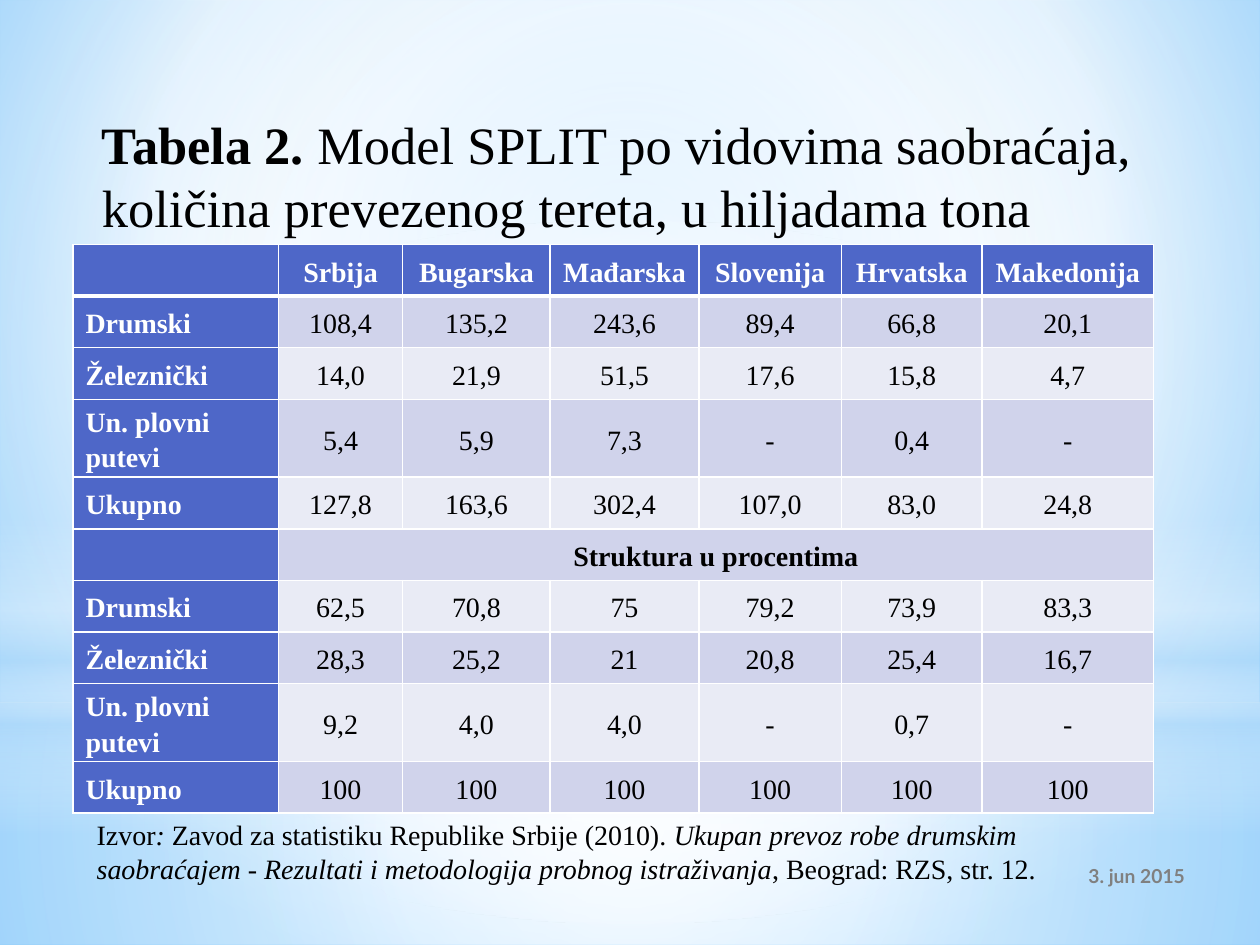
from lxml.etree import SubElement
from pptx import Presentation
from pptx.dml.color import RGBColor
from pptx.enum.shapes import MSO_SHAPE
from pptx.enum.text import MSO_ANCHOR, PP_ALIGN
from pptx.oxml.ns import qn
from pptx.util import Cm, Pt

WHITE = RGBColor(0xFF, 0xFF, 0xFF)
BLACK = RGBColor(0, 0, 0)
GREY = RGBColor(0x80, 0x80, 0x80)
HEADER_BLUE = RGBColor(0x4E, 0x67, 0xC8)
BAND_DARK = RGBColor(0xD0, 0xD3, 0xEB)
BAND_LIGHT = RGBColor(0xE9, 0xEB, 0xF5)
SKY = RGBColor(0x9E, 0xD5, 0xFF)
DEEP_SKY = RGBColor(0x5B, 0xB9, 0xFF)
MIST = RGBColor(0xB4, 0xDC, 0xFA)

SERIF, SANS = "Times New Roman", "Lato"
TITLE_ONLY = 5
CENTRE = (50, 50, 50, 50)

COLUMN_WIDTHS = (4.14, 2.51, 2.97, 3, 2.87, 2.84, 3.45)
ROW_HEIGHT, TALL_ROW_HEIGHT = 1.04, 1.57
WATERWAYS = "Un. plovni putevi"
SECTION = "Struktura u procentima"
FREIGHT = (
    ("", "Srbija", "Bugarska", "Mađarska", "Slovenija", "Hrvatska", "Makedonija"),
    ("Drumski", "108,4", "135,2", "243,6", "89,4", "66,8", "20,1"),
    ("Železnički", "14,0", "21,9", "51,5", "17,6", "15,8", "4,7"),
    (WATERWAYS, "5,4", "5,9", "7,3", "-", "0,4", "-"),
    ("Ukupno", "127,8", "163,6", "302,4", "107,0", "83,0", "24,8"),
    ("", SECTION, "", "", "", "", ""),
    ("Drumski", "62,5", "70,8", "75", "79,2", "73,9", "83,3"),
    ("Železnički", "28,3", "25,2", "21", "20,8", "25,4", "16,7"),
    (WATERWAYS, "9,2", "4,0", "4,0", "-", "0,7", "-"),
    ("Ukupno", "100", "100", "100", "100", "100", "100"),
)


def write_gradient(owner, stops, focus=None):
    """Set (position, colour, opacity) stops; focus is the circle's l, t, r, b in percent."""
    gradient = owner.find(".//" + qn("a:gradFill"))
    for child in list(gradient):
        gradient.remove(child)
    stop_list = SubElement(gradient, qn("a:gsLst"))
    for position, colour, opacity in stops:
        stop = SubElement(stop_list, qn("a:gs"), pos=str(position * 1000))
        rgb = SubElement(stop, qn("a:srgbClr"), val=str(colour))
        if opacity < 100:
            SubElement(rgb, qn("a:alpha"), val=str(opacity * 1000))
    if focus:
        circle = SubElement(gradient, qn("a:path"), path="circle")
        sides = {side: str(share * 1000) for side, share in zip("ltrb", focus)}
        SubElement(circle, qn("a:fillToRect"), **sides)
    else:
        SubElement(gradient, qn("a:lin"), ang="5400000", scaled="0")


def write_borders(cell, bottom_width):
    properties = cell._tc.get_or_add_tcPr()
    for index, (side, width) in enumerate(zip("LRTB", (1, 1, 1, bottom_width))):
        line = SubElement(properties, qn("a:ln" + side), w=str(Pt(width)))
        fill = SubElement(line, qn("a:solidFill"))
        SubElement(fill, qn("a:srgbClr"), val=str(WHITE))
        properties.insert(index, line)


class SlideBuilder:
    def __init__(self, slide):
        self.slide = slide

    def background(self, stops, focus):
        self.slide.background.fill.gradient()
        write_gradient(self.slide.element, stops, focus)

    def glow(self, kind, top, height, stops, focus=None):
        """Full-width translucent shape."""
        shape = self.slide.shapes.add_shape(kind, 0, Cm(top), Cm(25.4), Cm(height))
        shape.shadow.inherit = False
        shape.line.fill.background()
        shape.fill.gradient()
        write_gradient(shape.element, stops, focus)

    def style(self, paragraph, size, colour, bold=None, font=SERIF, align=PP_ALIGN.LEFT):
        paragraph.alignment = align
        paragraph.font.name = font
        paragraph.font.size = Pt(size)
        paragraph.font.color.rgb = colour
        paragraph.font.bold = bold

    def runs(self, paragraph, parts):
        """Add (text, bold, italic) runs."""
        for text, bold, italic in parts:
            run = paragraph.add_run()
            run.text = text
            run.font.bold = bold
            run.font.italic = italic

    def title(self, left, top, width, height, parts):
        title = self.slide.shapes.title
        title.left, title.top, title.width, title.height = map(Cm, (left, top, width, height))
        title.text_frame.vertical_anchor = MSO_ANCHOR.BOTTOM
        title.text_frame.word_wrap = True
        paragraph = title.text_frame.paragraphs[0]
        self.style(paragraph, 30, BLACK)
        self.runs(paragraph, parts)
        self.slide.shapes._spTree.append(title.element)  # in front of the glows

    def text(self, left, top, width, height, parts, anchor=MSO_ANCHOR.TOP, **style):
        frame = self.slide.shapes.add_textbox(*map(Cm, (left, top, width, height))).text_frame
        frame.word_wrap = True
        frame.vertical_anchor = anchor
        self.style(frame.paragraphs[0], **style)
        self.runs(frame.paragraphs[0], parts)

    def cell(self, cell, text, row, column):
        heading = row == 0 or column == 0
        band = BAND_DARK if row % 2 else BAND_LIGHT
        cell.fill.solid()
        cell.fill.fore_color.rgb = HEADER_BLUE if heading else band
        cell.vertical_anchor = MSO_ANCHOR.MIDDLE
        cell.margin_top = cell.margin_bottom = 0
        cell.text = text
        paragraph = cell.text_frame.paragraphs[0]
        paragraph.line_spacing = 1.15
        self.style(paragraph, 16, WHITE if heading else BLACK, heading or text == SECTION,
                   align=PP_ALIGN.CENTER if column else PP_ALIGN.LEFT)
        write_borders(cell, 1 if row else 3)

    def table(self, left, top, rows):
        heights = [TALL_ROW_HEIGHT if row[0] == WATERWAYS else ROW_HEIGHT for row in rows]
        table = self.slide.shapes.add_table(
            len(rows), len(COLUMN_WIDTHS), Cm(left), Cm(top),
            Cm(sum(COLUMN_WIDTHS)), Cm(sum(heights))).table
        for column, width in zip(table.columns, COLUMN_WIDTHS):
            column.width = Cm(width)
        for r, (values, height) in enumerate(zip(rows, heights)):
            table.rows[r].height = Cm(height)
            for c, value in enumerate(values):
                self.cell(table.cell(r, c), value, r, c)
            if SECTION in values:
                table.cell(r, 1).merge(table.cell(r, len(values) - 1))


def main():
    presentation = Presentation()
    presentation.slide_width, presentation.slide_height = Cm(25.4), Cm(19.05)
    builder = SlideBuilder(presentation.slides.add_slide(presentation.slide_layouts[TITLE_ONLY]))

    builder.background([(0, SKY, 100), (60, WHITE, 100), (100, DEEP_SKY, 100)], (20, 10, 20, 60))
    builder.glow(MSO_SHAPE.RECTANGLE, 14.17, 4.88,
                 [(0, WHITE, 91), (37, WHITE, 76), (100, MIST, 79)], CENTRE)
    builder.glow(MSO_SHAPE.RECTANGLE, 0, 14.17,
                 [(0, WHITE, 89), (48, WHITE, 62), (100, MIST, 79)], CENTRE)
    builder.glow(MSO_SHAPE.RECTANGLE, 10.46, 6.35,
                 [(0, WHITE, 0), (29, WHITE, 30), (45, MIST, 40),
                  (55, WHITE, 26), (65, MIST, 60), (100, WHITE, 0)])
    builder.glow(MSO_SHAPE.OVAL, 4.45, 14.17, [(0, WHITE, 100), (56, WHITE, 0)], CENTRE)

    builder.text(17.15, 17.15, 6.99, 1.02, [("3. jun 2015", True, None)], MSO_ANCHOR.MIDDLE,
                 size=11, colour=GREY, font=SANS, align=PP_ALIGN.RIGHT)
    builder.table(1.47, 4.93, FREIGHT)
    builder.text(1.7, 16.36, 21.59, 1.63, [
        ("Izvor", None, None),
        (":", None, True),
        (" Zavod za statistiku Republike Srbije (2010). ", None, None),
        ("Ukupan prevoz robe drumskim saobraćajem - Rezultati i metodologija "
         "probnog istraživanja", None, True),
        (", Beograd: RZS, str. 12.", None, None),
    ], size=16, colour=BLACK)
    builder.title(1.8, 2.11, 22.12, 2.82, [
        ("Tabela 2.", True, None),
        (" Model SPLIT po vidovima saobraćaja, količina prevezenog tereta, "
         "u hiljadama tona", None, None),
    ])
    presentation.save("out.pptx")


if __name__ == "__main__":
    main()
